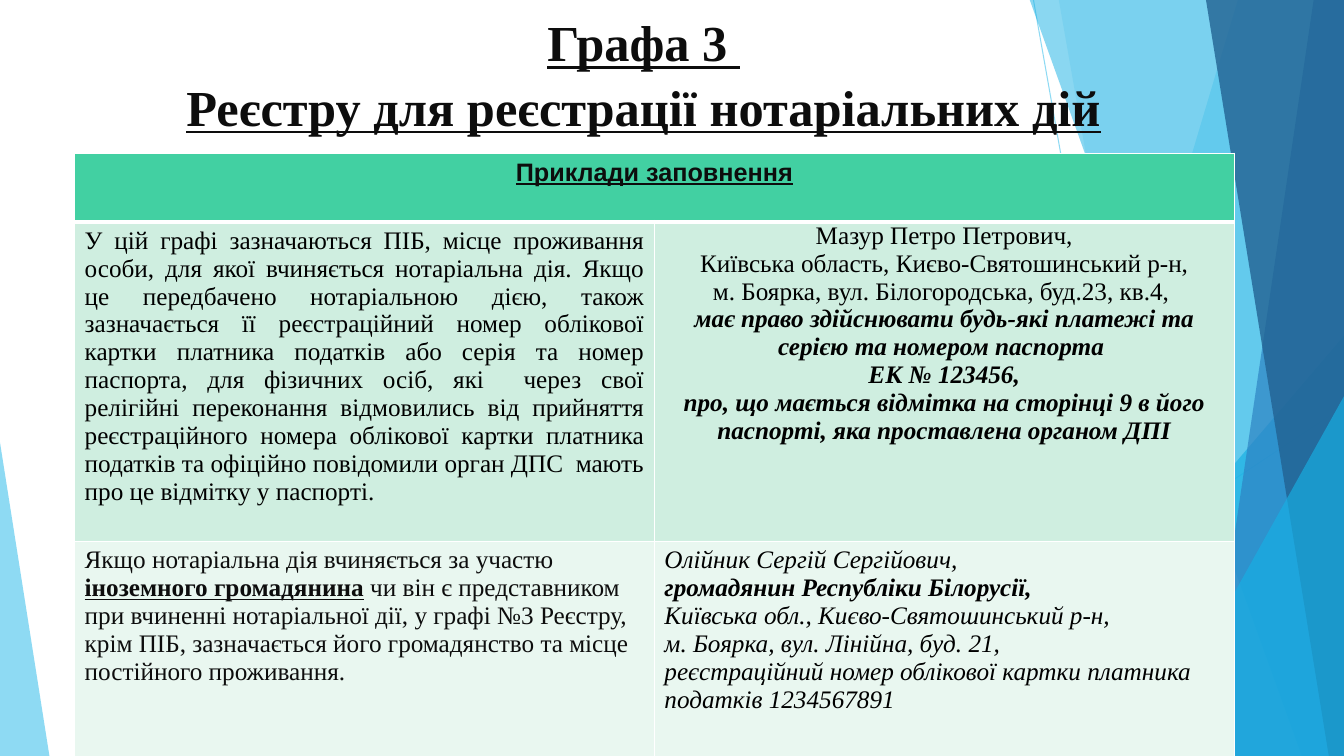
from copy import deepcopy

from lxml import etree
from pptx import Presentation
from pptx.dml.color import RGBColor
from pptx.enum import shapes, text
from pptx.oxml.ns import qn
from pptx.util import Inches, Pt

SKY = RGBColor(0x5F, 0xCB, 0xEF)
AZURE = RGBColor(0x17, 0xB0, 0xE4)
BLUE = RGBColor(0x2E, 0x83, 0xC3)
NAVY = RGBColor(0x22, 0x62, 0x92)
INK = RGBColor(0x0D, 0x0D, 0x0D)
BLACK = RGBColor(0, 0, 0)
WHITE = RGBColor(0xFF, 0xFF, 0xFF)
GREEN = RGBColor(0x42, 0xD0, 0xA2)
MINT = RGBColor(0xCF, 0xEE, 0xE0)
PALE = RGBColor(0xE9, 0xF7, 0xF0)
SERIF, SANS = "Times New Roman", "Arial"
CENTER, LEFT, JUSTIFY = (text.PP_ALIGN.CENTER, text.PP_ALIGN.LEFT,
                         text.PP_ALIGN.JUSTIFY)

WIDTH, HEIGHT, TOP = 13.33, 7.5, -0.01

# Decoration: start, end
LINES = [((10.25, 0), (11.58, HEIGHT)), ((WIDTH, 4.03), (8.12, HEIGHT))]
# Bands reach the right edge: top-left x, bottom-left x, colour, opacity
# Triangles: left, top, width, height, apex, colour, opacity
DECOR = [
    (12.28, 10.04, SKY, 36),
    (10.5, 11.82, SKY, 20),
    (9.77, 3.33, 3.56, 4.17, 1, AZURE, 66),
    (10.21, 12.91, AZURE, 50),
    (13.03, 11.92, BLUE, 70),
    (11.96, 13.18, NAVY, 80),
    (11.34, 3.93, 1.99, 3.57, 1, AZURE, 66),
    (0, 4.39, 0.49, 3.11, 0, SKY, 70),
]

TITLE = "Графа 3 \vРеєстру для реєстрації нотаріальних дій"
TITLE_FORMAT = {"size": Pt(36), "name": SERIF, "bold": True, "underline": True}

HEADING = {"name": SANS, "bold": True, "underline": True}
PLAIN, STRONG = {}, {"bold": True, "underline": True}
ITALIC, BOLD_ITALIC = {"italic": True}, {"bold": True, "italic": True}

# Each cell: alignment, text colour, paragraphs of (text, format) runs
HEADER_CELL = (CENTER, INK, [[("Приклади заповнення", HEADING)]])
RULE_CELL = (JUSTIFY, BLACK, [[(
    "У цій графі зазначаються ПІБ, місце проживання особи, для якої вчиняється "
    "нотаріальна дія. Якщо це передбачено нотаріальною дією, також зазначається "
    "її реєстраційний номер облікової картки платника податків або серія та номер "
    "паспорта, для фізичних осіб, які  через свої релігійні переконання "
    "відмовились від прийняття реєстраційного номера облікової картки платника "
    "податків та офіційно повідомили орган ДПС  мають про це відмітку у паспорті.",
    PLAIN)]])
PASSPORT_CELL = (CENTER, BLACK, [
    [("Мазур Петро Петрович,", PLAIN)],
    [("Київська область, Києво-Святошинський р-н,", PLAIN)],
    [("м. Боярка, вул. Білогородська, буд.23, кв.4, ", PLAIN)],
    [("має право здійснювати будь-які платежі та серією та номером паспорта ",
      BOLD_ITALIC)],
    [("ЕК № 123456,", BOLD_ITALIC)],
    [("про, що мається відмітка на сторінці 9 в його паспорті, "
      "яка проставлена органом ДПІ", BOLD_ITALIC)],
])
FOREIGNER_CELL = (LEFT, INK, [[
    ("Якщо нотаріальна дія вчиняється за участю ", PLAIN),
    ("іноземного громадянина", STRONG),
    (" чи він є представником при вчиненні нотаріальної дії, у графі №3 Реєстру, "
     "крім ПІБ, зазначається його громадянство та місце постійного проживання.",
     PLAIN),
]])
CITIZEN_CELL = (LEFT, BLACK, [
    [("Олійник Сергій Сергійович,", ITALIC)],
    [("громадянин Республіки Білорусії,", BOLD_ITALIC)],
    [("Київська обл., Києво-Святошинський р-н,", ITALIC)],
    [("м. Боярка, вул. Лінійна, буд. 21,", ITALIC)],
    [("реєстраційний номер облікової картки платника податків 1234567891", ITALIC)],
])
# Row height, fill, cells
ROWS = [
    (0.68, GREEN, [HEADER_CELL]),
    (3.17, MINT, [RULE_CELL, PASSPORT_CELL]),
    (2.32, PALE, [FOREIGNER_CELL, CITIZEN_CELL]),
]
COLUMN_WIDTH = 5.75


def set_opacity(fill_owner, percent):
    color = next(fill_owner.iter(qn("a:srgbClr")))
    etree.SubElement(color, qn("a:alpha")).set("val", str(percent * 1000))


def apply_format(font, color, values):
    for name, value in values.items():
        setattr(font, name, value)
    font.color.rgb = color


def add_line(page, start, end):
    line = page.shapes.add_connector(
        shapes.MSO_CONNECTOR.STRAIGHT, *map(Inches, start + end))
    line.line.color.rgb = SKY
    line.line.width = Pt(0.75)
    properties = line.element.spPr
    set_opacity(properties, 70)
    etree.SubElement(properties, qn("a:effectLst"))


def add_band(page, top_x, bottom_x):
    corners = [(top_x, TOP), (WIDTH, TOP), (WIDTH, HEIGHT), (bottom_x, HEIGHT)]
    points = [(Inches(x), Inches(y)) for x, y in corners]
    builder = page.shapes.build_freeform(*points[0])
    builder.add_line_segments(points[1:], close=True)
    return builder.convert_to_shape()


def add_triangle(page, left, top, width, height, apex):
    triangle = page.shapes.add_shape(
        shapes.MSO_SHAPE.ISOSCELES_TRIANGLE,
        *map(Inches, (left, top, width, height)))
    triangle.adjustments[0] = apex
    return triangle


def add_decor(page):
    for start, end in LINES:
        add_line(page, start, end)
    for *geometry, color, opacity in DECOR:
        add = add_band if len(geometry) == 2 else add_triangle
        piece = add(page, *geometry)
        piece.shadow.inherit = False
        piece.line.fill.background()
        piece.fill.solid()
        piece.fill.fore_color.rgb = color
        set_opacity(piece.element.spPr, opacity)


def place_title(page):
    title = page.shapes.title
    title.left, title.top, title.width, title.height = map(
        Inches, (0.74, 0, 11.29, 1.74))
    frame = title.text_frame
    frame.auto_size = text.MSO_AUTO_SIZE.NONE
    frame.vertical_anchor = text.MSO_ANCHOR.TOP
    frame.margin_top = Inches(0.07)
    para = frame.paragraphs[0]
    para.text = TITLE
    para.alignment = CENTER
    para.line_spacing = 1.07
    for span in para.runs:
        apply_format(span.font, INK, TITLE_FORMAT)
    run_format = next(title.element.iter(qn("a:rPr")))
    for line_break in title.element.iter(qn("a:br")):
        line_break.insert(0, deepcopy(run_format))
    page.shapes.element.append(title.element)  # bring in front of the decoration


def set_borders(cell, bottom_width):
    properties = cell._tc.get_or_add_tcPr()
    widths = {"a:lnL": 1, "a:lnR": 1, "a:lnT": 1, "a:lnB": bottom_width}
    for index, (tag, width) in enumerate(widths.items()):
        border = etree.Element(qn(tag), w=str(Pt(width)))
        fill = etree.SubElement(border, qn("a:solidFill"))
        etree.SubElement(fill, qn("a:srgbClr"), val=str(WHITE))
        properties.insert(index, border)


def fill_cell(cell, alignment, color, paragraphs):
    frame = cell.text_frame
    for index, spans in enumerate(paragraphs):
        para = frame.add_paragraph() if index else frame.paragraphs[0]
        para.alignment = alignment
        for words, values in spans:
            span = para.add_run()
            span.text = words
            base = {"size": Pt(18), "name": SERIF, "bold": False}
            apply_format(span.font, color, base | values)


def add_examples(page):
    height = sum(row[0] for row in ROWS)
    table = page.shapes.add_table(
        len(ROWS), 2, Inches(0.74), Inches(1.52),
        Inches(2 * COLUMN_WIDTH), Inches(height)).table
    table.cell(0, 0).merge(table.cell(0, 1))
    for r, (row_height, fill, cells) in enumerate(ROWS):
        table.rows[r].height = Inches(row_height)
        for cell in table.rows[r].cells:
            cell.fill.solid()
            cell.fill.fore_color.rgb = fill
            set_borders(cell, 1 if r else 3)
        for c, content in enumerate(cells):
            fill_cell(table.cell(r, c), *content)
    passport = table.cell(1, 1)
    passport.margin_left = passport.margin_right = Inches(0.12)
    passport.margin_top = passport.margin_bottom = 0


def main():
    deck = Presentation()
    deck.slide_width, deck.slide_height = Inches(WIDTH), Inches(HEIGHT)
    page = deck.slides.add_slide(deck.slide_layouts.get_by_name("Title Only"))
    add_decor(page)
    place_title(page)
    add_examples(page)
    deck.save("out.pptx")


if __name__ == "__main__":
    main()
